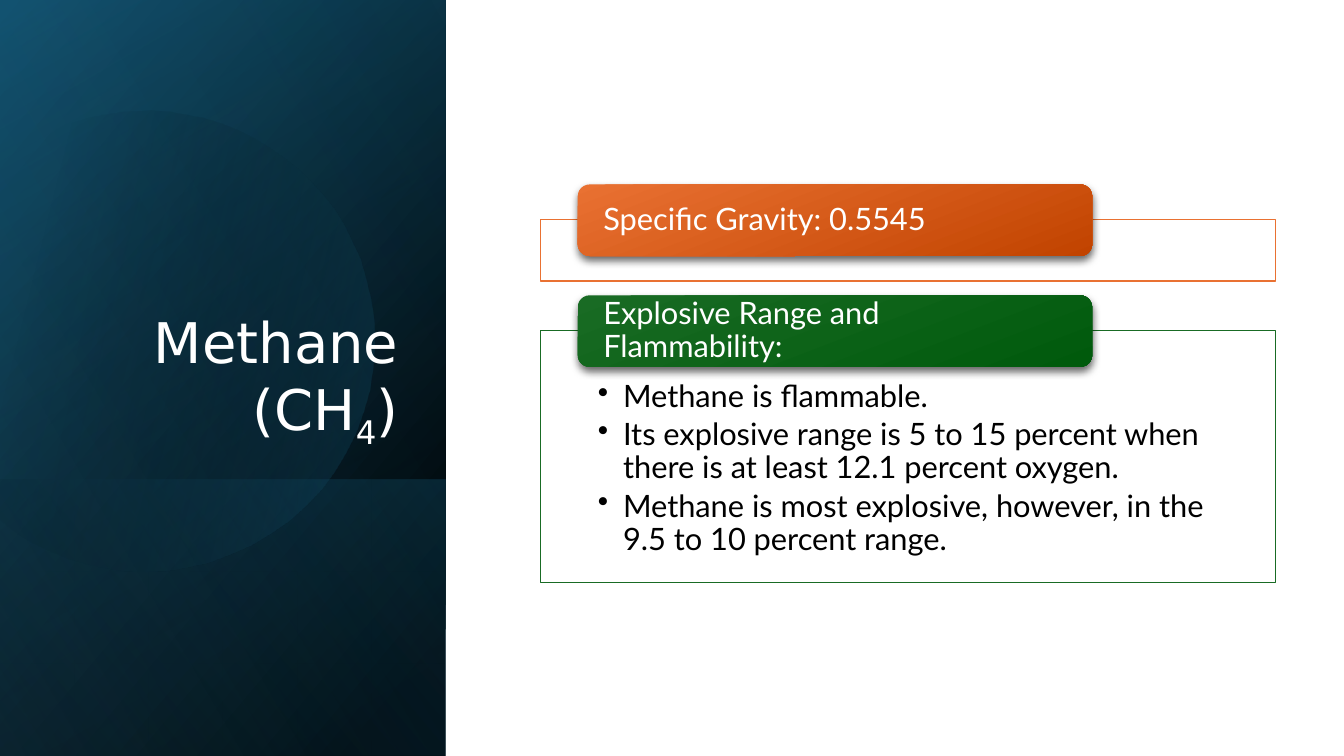
import math

import pptx
import pptx.dml.color
import pptx.enum.shapes
import pptx.enum.text
import pptx.oxml.ns
import pptx.oxml.xmlchemy
import pptx.util
from lxml import etree

PX = 9144  # EMU per px, 100 px to the inch
SHAPE = pptx.enum.shapes.MSO_SHAPE
ANCHOR = pptx.enum.text.MSO_ANCHOR
ALIGN = pptx.enum.text.PP_ALIGN
qn = pptx.oxml.ns.qn

DISC_START = (149, 110)
DISC_CURVES = [
    [(246, 112), (335, 177), (363, 275)],
    [(398, 397), (328, 523), (207, 558)],
    [(131, 580), (53, 561), (-3, 514)],
    [(-15, 503)],
    [(-15, 175)],
    [(0, 161)],
    [(23, 142), (50, 128), (80, 119)],
    [(103, 113), (126, 110), (149, 110)],
]
DISC_CENTER = (158.5, 334.5)
DISC_TURN = 343.9


def px(*lengths):
    return [round(length * PX) for length in lengths]


def color(code):
    return pptx.dml.color.RGBColor.from_string(code)


def add_node(parent, tag, **attributes):
    node = etree.SubElement(parent, qn(tag))
    for name, value in attributes.items():
        node.set(name, str(value))
    return node


def add_color(parent, code, opacity):
    node = add_node(parent, "a:srgbClr", val=code)
    if opacity < 100:
        add_node(node, "a:alpha", val=opacity * 1000)


def paint_gradient(shape, angle, *stops):
    """Fill with stops of (position, colour, opacity), running clockwise by angle."""
    shape.shadow.inherit = False
    shape.line.fill.background()
    shape.fill.gradient()
    gradient = shape._element.spPr.find(qn("a:gradFill"))
    for child in list(gradient):
        gradient.remove(child)
    gradient.set("rotWithShape", "1")
    stop_list = add_node(gradient, "a:gsLst")
    for position, code, opacity in stops:
        add_color(add_node(stop_list, "a:gs", pos=position * 1000), code, opacity)
    add_node(gradient, "a:lin", ang=angle * 60000, scaled=0)


def drop_shadow(shape):
    effects = shape._element.spPr.find(qn("a:effectLst"))
    shadow = add_node(effects, "a:outerShdw", blurRad=pptx.util.Pt(6), dist=pptx.util.Pt(3),
                      dir=90 * 60000, algn="ctr", rotWithShape=0)
    add_color(shadow, "000000", 60)


def set_frame(shape, left=10, top=5, right=10, bottom=5, anchor=ANCHOR.TOP):
    frame = shape.text_frame
    frame.word_wrap = True
    frame.auto_size = pptx.enum.text.MSO_AUTO_SIZE.NONE
    frame.vertical_anchor = anchor
    frame.margin_left, frame.margin_top, frame.margin_right, frame.margin_bottom = px(
        left, top, right, bottom)
    return frame


def write(para, text, size=22, font="Lato", code="FFFFFF", align=ALIGN.LEFT, subscript=False):
    para.alignment = align
    para.line_spacing = 0.9
    span = para.add_run()
    span.text = text
    span.font.size = pptx.util.Pt(size)
    span.font.name = font
    span.font.color.rgb = color(code)
    if subscript:
        span._r.get_or_add_rPr().set("baseline", "-25000")


def add_bullet(para, indent):
    para.level = 1
    para.space_after = pptx.util.Pt(3.5)
    properties = para._p.get_or_add_pPr()
    properties.set("marL", str(indent * PX))
    properties.set("indent", str(-indent * PX))
    add_node(properties, "a:buChar", char="•")


def add_turned_panel(page, x, y, width, height, angle, *stops):
    """Cover the box with a mirrored rectangle that is turned by 90 degrees."""
    shift = (width - height) / 2
    shape = page.shapes.add_shape(SHAPE.RECTANGLE, *px(x + shift, y - shift, height, width))
    shape.rotation = 90
    shape._element.spPr.find(qn("a:xfrm")).set("flipH", "1")
    paint_gradient(shape, angle, *stops)


def bezier(start, first, second, end, steps=16):
    for step in range(1, steps + 1):
        t = step / steps
        weights = ((1 - t) ** 3, 3 * t * (1 - t) ** 2, 3 * t * t * (1 - t), t ** 3)
        yield tuple(sum(w * point[axis] for w, point in
                        zip(weights, (start, first, second, end))) for axis in (0, 1))


def turn_back(point):
    """Undo the turn of the disc, so that its rotation can be set on the shape."""
    angle = math.radians(-DISC_TURN)
    dx, dy = point[0] - DISC_CENTER[0], point[1] - DISC_CENTER[1]
    return (DISC_CENTER[0] + dx * math.cos(angle) - dy * math.sin(angle),
            DISC_CENTER[1] + dx * math.sin(angle) + dy * math.cos(angle))


def add_disc(page, x, y):
    points = [DISC_START]
    for segment in DISC_CURVES:
        points += bezier(points[-1], *segment) if len(segment) == 3 else segment
    outline = [turn_back(point) for point in points]
    outline = [(x + across, y + down) for across, down in outline]
    builder = page.shapes.build_freeform(*outline[0], scale=PX)
    builder.add_line_segments(outline[1:], close=True)
    disc = builder.convert_to_shape()
    disc.rotation = DISC_TURN
    paint_gradient(disc, 30, (29, "000000", 0), (100, "156082", 43))


def add_title_panel(page, x, y, width, height):
    box = (x, y, width, height)
    add_turned_panel(page, *box, 50, (8, "000000", 100), (100, "104862", 100))
    add_turned_panel(page, *box, 30, (0, "000000", 0), (99, "156082", 46))
    add_turned_panel(page, x, y + height - 274, width, 274, 130,
                     (2, "156082", 29), (100, "000000", 30))
    add_disc(page, x, y)
    add_turned_panel(page, *box, 120, (0, "000000", 0), (99, "46B1E1", 11))

    title = page.shapes.title
    title.left, title.top, title.width, title.height = px(x + 64, y + 184, 341, 262)
    para = set_frame(title, anchor=ANCHOR.BOTTOM).paragraphs[0]
    for text, subscript in (("Methane (CH", False), ("4", True), (")", False)):
        write(para, text, size=40, font="DejaVu Sans", align=ALIGN.RIGHT, subscript=subscript)
    page.shapes._spTree.append(title._element)


def add_fact_card(page, x, y, width, height, heading, bullets, light, dark):
    """Draw a framed box with a heading tab over its top edge."""
    card = page.shapes.add_shape(SHAPE.RECTANGLE, *px(x, y, width, height))
    card.shadow.inherit = False
    card.fill.solid()
    card.fill.fore_color.rgb = color("FFFFFF")
    white = card._element.spPr.find(qn("a:solidFill"))[0]
    add_node(white, "a:alpha", val=90000)
    card.line.color.rgb = color(light)
    card.line.width = pptx.util.Pt(1)
    if bullets:
        frame = set_frame(card, 57, 50, 57, 17)
        for index, text in enumerate(bullets):
            para = frame.add_paragraph() if index else frame.paragraphs[0]
            write(para, text, code="000000")
            add_bullet(para, 25)

    tab = page.shapes.add_shape(SHAPE.ROUNDED_RECTANGLE, *px(x + 37, y - 35, width * 0.7, 71))
    paint_gradient(tab, 69, (0, light, 100), (100, dark, 100))
    drop_shadow(tab)
    write(set_frame(tab, 22, 0, 22, 0, ANCHOR.MIDDLE).paragraphs[0], heading)


def main():
    deck = pptx.Presentation()
    deck.slide_width, deck.slide_height = px(1333, 750)
    page = deck.slides.add_slide(deck.slide_layouts[5])
    add_title_panel(page, 0, 0, 442, 750)
    add_fact_card(page, 536, 218, 729, 61, "Specific Gravity: 0.5545", [], "E97132", "C14300")
    add_fact_card(page, 536, 328, 729, 250, "Explosive Range and Flammability:", [
        "Methane is flammable.",
        "Its explosive range is 5 to 15 percent when there is at least 12.1 percent oxygen.",
        "Methane is most explosive, however, in the 9.5 to 10 percent range.",
    ], "196B24", "005A0C")
    deck.save("out.pptx")


if __name__ == "__main__":
    main()
